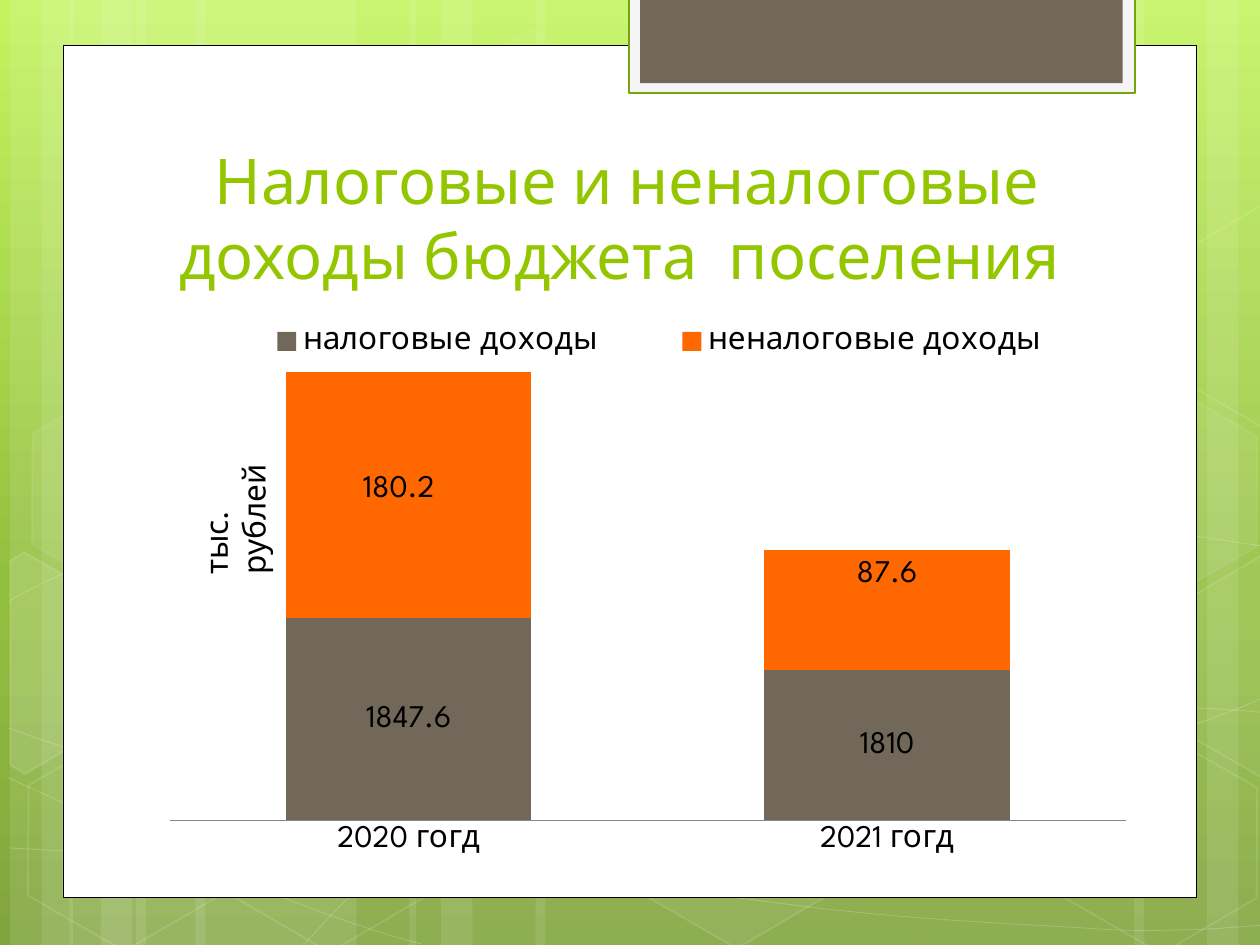
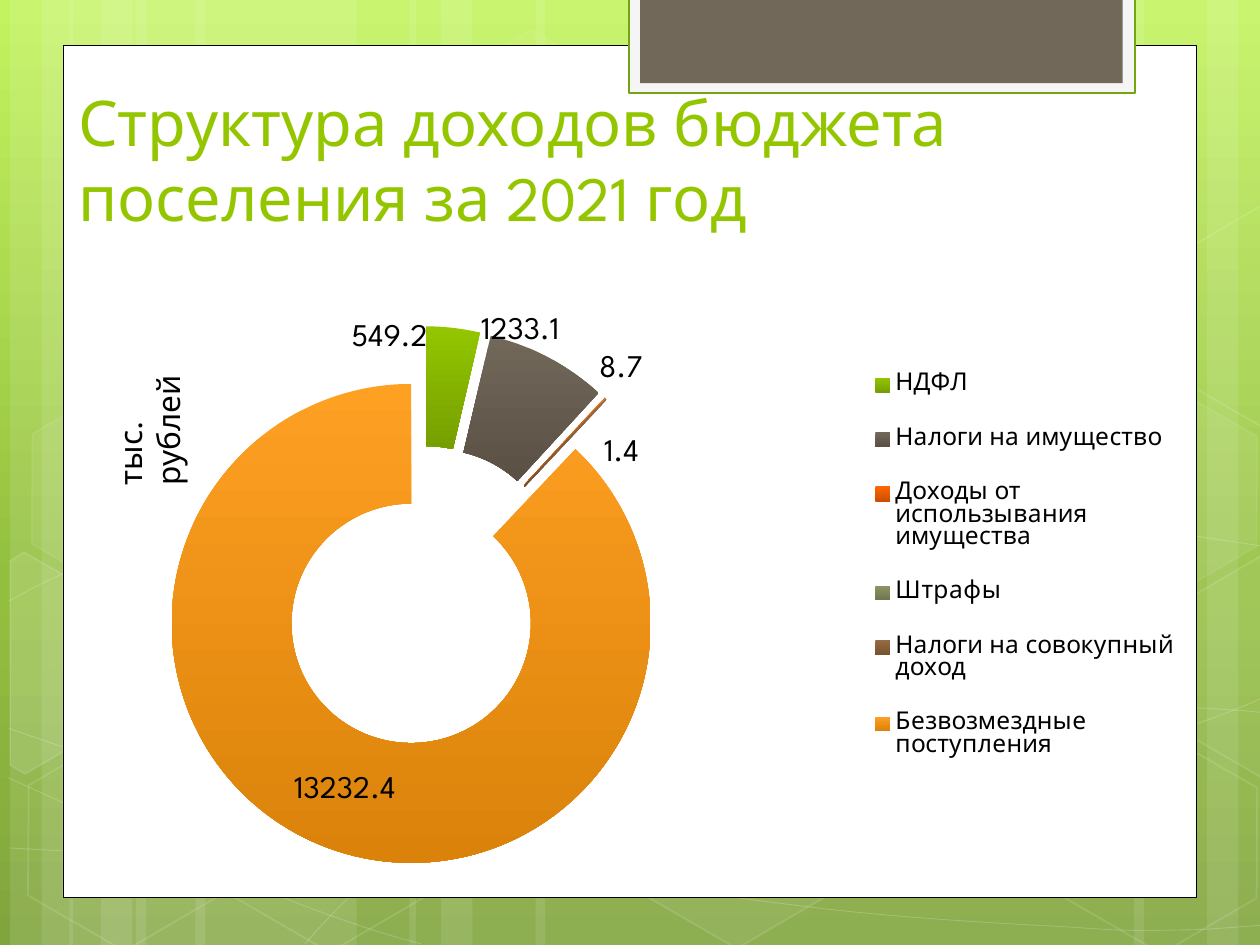
from copy import deepcopy
from math import cos, radians, sin
from typing import NamedTuple, Optional

from lxml.etree import SubElement
from pptx import Presentation
from pptx.chart.data import CategoryChartData
from pptx.dml.color import RGBColor
from pptx.enum.chart import XL_CHART_TYPE as ChartType
from pptx.enum.chart import XL_LEGEND_POSITION as LegendPosition
from pptx.enum.chart import XL_TICK_MARK as TickMark
from pptx.enum.shapes import MSO_SHAPE as Preset
from pptx.enum.text import MSO_ANCHOR as Anchor
from pptx.enum.text import MSO_AUTO_SIZE as AutoSize
from pptx.enum.text import PP_ALIGN as Align
from pptx.oxml.ns import qn
from pptx.util import Emu, Pt

EMU_PER_PX = 9144
TILT = 30
FONT = "League Spartan"
WHITE, BLACK = "FFFFFF", "000000"
LIME, TAUPE, ORANGE = "94C600", "71685A", "FF6700"
BACKDROP = [(0, "C3F35F"), (0.62, "93BF3F"), (1, "81A53E")]


class Box(NamedTuple):
    left: int
    top: int
    width: int
    height: int


class Hexagon(NamedTuple):
    left: int
    top: int
    fill_alpha: int
    line_alpha: int


class Shard(NamedTuple):
    center: tuple
    points: list
    fill_alpha: int


class Category(NamedTuple):
    name: str
    value: float
    color: str
    shade: str


class Area(NamedTuple):
    x: float
    y: float
    w: Optional[float] = None
    h: Optional[float] = None


STRIPES = [(108, 175), (8, 50), (33, 83), (155, 175), (55, 50), (80, 83),
           (733, 175), (958, 50), (900, 83), (425, 308), (325, 50), (350, 83)]
WAVES = [
    [(7, 673), (61, 676), (115, 679), (190, 678), (265, 677), (358, 675), (458, 665),
     (558, 655), (700, 636), (792, 617), (883, 598), (977, 568), (1007, 551)],
    [(7, 477), (36, 461), (65, 446), (121, 431), (178, 416), (259, 394), (347, 387),
     (436, 380), (544, 379), (654, 387), (764, 395), (947, 426), (1007, 434)],
    [(6, 617), (127, 672), (247, 727), (334, 749)],
    [(7, 578), (38, 589), (70, 600), (128, 616), (186, 631), (273, 656), (357, 673),
     (440, 690), (545, 708), (628, 718), (711, 729), (800, 733), (853, 736),
     (905, 740), (919, 738), (945, 738), (971, 737), (989, 735), (1007, 734)],
    [(242, 749), (260, 729), (278, 709), (302, 691), (326, 673), (360, 653), (388, 639),
     (416, 625), (433, 619), (470, 609), (506, 599), (573, 585), (608, 578),
     (644, 571), (649, 571), (680, 569), (711, 566), (760, 563), (794, 562),
     (829, 561), (886, 562), (886, 562), (886, 562), (953, 562), (953, 562),
     (971, 563), (988, 564), (997, 565), (1006, 566), (1003, 565), (1006, 566)],
]
HEXAGONS = [
    Hexagon(334, 36, 4, 8), Hexagon(497, 589, 6, 12), Hexagon(11, 591, 0, 12),
    Hexagon(14, 312, 7, 8), Hexagon(174, 592, 0, 12), Hexagon(753, 453, 10, 12),
    Hexagon(834, 593, 0, 12), Hexagon(834, 314, 7, 8),
]
SHARDS = [
    Shard((36, 535), [(8, 445), (19, 438), (96, 482), (95, 570), (20, 614), (8, 607)], 10),
    Shard((985, 520), [(926, 485), (1001, 441), (1009, 446), (1009, 613), (1002, 617),
                       (926, 573)], 4),
    Shard((985, 241), [(926, 207), (1001, 163), (1010, 168), (1009, 335), (1002, 339),
                       (926, 295)], 0),
]
INCOME = [
    Category("НДФЛ", 549.2, LIME, "759F00"),
    Category("Налоги на имущество", 1233.1, TAUPE, "5A5044"),
    Category("Доходы от использывания имущества", 8.7, ORANGE, "CC4F00"),
    Category("Штрафы", 1.4, "909465", "72764D"),
    Category("Налоги на совокупный доход", 17.6, "956B43", "77522F"),
    Category("Безвозмездные поступления", 13232.4, "FEA022", "DA820A"),
]


def px(length: int) -> Emu:
    return Emu(length * EMU_PER_PX)


def emu_box(box: Box) -> list:
    return [px(length) for length in box]


def rgb(color: str) -> RGBColor:
    return RGBColor.from_string(color)


def paint(shape, fill="", fill_alpha=100, line="", line_alpha=100, weight=1.0) -> None:
    shape.shadow.inherit = False
    for surface, color, alpha, route in (
            (shape.fill, fill, fill_alpha, "p:spPr/a:solidFill/a:srgbClr"),
            (shape.line.fill, line, line_alpha, "p:spPr/a:ln/a:solidFill/a:srgbClr")):
        if not color or not alpha:
            surface.background()
            continue
        surface.solid()
        surface.fore_color.rgb = rgb(color)
        if alpha < 100:
            SubElement(shape.element.xpath(route)[0], qn("a:alpha"), val=str(alpha * 1000))
    if line:
        shape.line.width = Pt(weight)


def gradient(fill, stops: list) -> None:
    fill.gradient_angle = 270
    for stop, (position, color) in zip(fill.gradient_stops, stops):
        stop.position = position
        stop.color.rgb = rgb(color)


def set_font(font, size: int, color: str = BLACK) -> None:
    font.name = FONT
    font.size = Pt(size)
    font.color.rgb = rgb(color)


def write(frame, text: str, *, size=18, color=BLACK, align=Align.LEFT, anchor=Anchor.TOP) -> None:
    frame.word_wrap = True
    frame.auto_size = AutoSize.NONE
    frame.vertical_anchor = anchor
    paragraph = frame.paragraphs[0]
    paragraph.alignment = align
    run = paragraph.add_run()
    run.text = text
    set_font(run.font, size, color)


def add_panel(shapes, box: Box, **style) -> None:
    paint(shapes.add_shape(Preset.RECTANGLE, *emu_box(box)), **style)


def add_outline(shapes, points: list, close: bool, **style):
    start, *rest = [(round(x * EMU_PER_PX), round(y * EMU_PER_PX)) for x, y in points]
    builder = shapes.build_freeform(*start)
    builder.add_line_segments(rest, close=close)
    outline = builder.convert_to_shape()
    paint(outline, **style)
    return outline


def bend(outline) -> None:
    route = outline.element.xpath(".//a:path")[0]
    segments = route.findall(qn("a:lnTo"))
    for first in range(0, len(segments), 3):
        curve = SubElement(route, qn("a:cubicBezTo"))
        for segment in segments[first:first + 3]:
            curve.append(segment[0])
            route.remove(segment)


def untilt(points: list, center: tuple) -> list:
    cosine, sine = cos(radians(TILT)), sin(radians(TILT))
    offsets = [(x - center[0], y - center[1]) for x, y in points]
    return [(center[0] + x * cosine + y * sine, center[1] - x * sine + y * cosine)
            for x, y in offsets]


def decorate(layout, slide) -> None:
    backdrop = layout.background.fill
    backdrop.gradient()
    first_stop = layout.element.xpath(".//p:bg//a:gs")[0]
    first_stop.addnext(deepcopy(first_stop))
    gradient(backdrop, BACKDROP)
    for placeholder in list(layout.placeholders):
        if placeholder.placeholder_format.idx:
            placeholder.element.getparent().remove(placeholder.element)

    shapes = slide.shapes
    for left, width in STRIPES:
        add_panel(shapes, Box(left, 0, width, 750), fill=WHITE, fill_alpha=10)
    for wave in WAVES:
        bend(add_outline(shapes, wave, False, line=WHITE, line_alpha=20, weight=0.5))
    for left, top, fill_alpha, line_alpha in HEXAGONS:
        hexagon = shapes.add_shape(Preset.HEXAGON, *emu_box(Box(left, top, 175, 152)))
        hexagon.adjustments[0] = 0.285
        hexagon.rotation = TILT
        paint(hexagon, WHITE, fill_alpha, WHITE, line_alpha)
    for center, points, fill_alpha in SHARDS:
        shard = add_outline(shapes, untilt(points, center), True, fill=WHITE,
                            fill_alpha=fill_alpha, line=WHITE, line_alpha=12)
        shard.rotation = TILT
    add_panel(shapes, Box(50, 36, 900, 676), fill=WHITE, line=BLACK, weight=0.5)
    add_panel(shapes, Box(499, -2, 402, 76), fill="F5F5F5", line="74A510", weight=1.25)
    add_panel(shapes, Box(508, -2, 383, 68), fill=TAUPE)
    for shape in list(shapes):
        if not shape.is_placeholder:
            layout.shapes.element.append(shape.element)


def set_title(slide, text: str, box: Box, align=Align.LEFT) -> None:
    title = slide.shapes.title
    title.left, title.top, title.width, title.height = emu_box(box)
    write(title.text_frame, text, size=36, color=LIME, align=align, anchor=Anchor.BOTTOM)


def add_unit(slide, left: int, top: int) -> None:
    unit = slide.shapes.add_textbox(*emu_box(Box(left, top, 146, 40)))
    unit.rotation = 270
    write(unit.text_frame, "тыс. рублей")


def place(element, area: Area, index: int, inner: bool = False) -> None:
    for stale in element.findall(qn("c:layout")):
        element.remove(stale)
    layout = SubElement(element, qn("c:layout"))
    element.insert(index, layout)
    manual = SubElement(layout, qn("c:manualLayout"))
    if inner:
        SubElement(manual, qn("c:layoutTarget"), val="inner")
    if area.w is not None:
        for mode in ("xMode", "yMode"):
            SubElement(manual, qn(f"c:{mode}"), val="edge")
    for key, value in area._asdict().items():
        if value is not None:
            SubElement(manual, qn(f"c:{key}"), val=str(value))


def add_chart(slide, kind, data, box: Box, plot_area: Area, legend_area: Area,
              legend_position, legend_size: int = 18):
    chart = slide.shapes.add_chart(kind, *emu_box(box), data).chart
    chart.has_title = False
    set_font(chart.font, 18)
    chart.has_legend = True
    chart.legend.position = legend_position
    chart.legend.include_in_layout = False
    set_font(chart.legend.font, legend_size)
    place(chart.element.xpath(".//c:plotArea")[0], plot_area, 0, inner=True)
    place(chart.element.xpath(".//c:legend")[0], legend_area, 1)
    for series in chart.plots[0].series:
        labels = series.data_labels
        labels.show_value = True
        labels.number_format = "General"
        labels.number_format_is_linked = False
        set_font(labels.font, 18)
    for labels in chart.element.xpath(".//c:dLbls"):
        leaders = labels.find(qn("c:showLeaderLines"))
        if leaders is None:
            leaders = SubElement(labels, qn("c:showLeaderLines"))
        leaders.set("val", "0")
    return chart


def point_label(chart, series: int, point: int):
    set_font(chart.plots[0].series[series].points[point].data_label.font, 18)
    return chart.element.xpath(
        f'.//c:ser[c:idx/@val="{series}"]/c:dLbls/c:dLbl[c:idx/@val="{point}"]')[0]


def build_revenue(slide) -> None:
    set_title(slide, "Налоговые и неналоговые доходы бюджета  поселения ",
              Box(114, 112, 768, 125), Align.CENTER)
    data = CategoryChartData()
    data.categories = ["2020 гогд", "2021 гогд"]
    data.add_series("налоговые доходы", [1847.6, 1810])
    data.add_series("неналоговые доходы", [180.2, 87.6])
    chart = add_chart(slide, ChartType.COLUMN_STACKED, data, Box(122, 241, 795, 461),
                      Area(0.016, 0.065, 0.955, 0.825), Area(0.05, 0.03, 0.91, 0.07),
                      LegendPosition.TOP)
    plot = chart.plots[0]
    plot.gap_width, plot.overlap = 95, 100
    plot.vary_by_categories = False
    for series, color in zip(plot.series, (TAUPE, ORANGE)):
        series.format.fill.solid()
        series.format.fill.fore_color.rgb = rgb(color)
    for point, offset in enumerate([Area(-0.01, -0.01), Area(0, -0.06)]):
        place(point_label(chart, 1, point), offset, 1)
    amounts, years = chart.value_axis, chart.category_axis
    amounts.minimum_scale, amounts.maximum_scale = 1700, 2050
    amounts.has_major_gridlines = False
    amounts.visible = False
    years.major_tick_mark = TickMark.NONE
    years.format.line.color.rgb = rgb("868686")
    add_unit(slide, 98, 373)


def build_structure(slide) -> None:
    set_title(slide, "Структура доходов бюджета поселения за 2021 год", Box(52, 131, 945, 60))
    data = CategoryChartData()
    data.categories = [income.name for income in INCOME]
    data.add_series("Series 1", [income.value for income in INCOME])
    chart = add_chart(slide, ChartType.DOUGHNUT, data, Box(59, 233, 898, 480),
                      Area(0.027, 0.054, 0.561, 0.891), Area(0.7, 0.08, 0.28, 0.74),
                      LegendPosition.RIGHT, 14)
    name = chart.element.xpath(".//c:ser/c:tx")[0]
    name.addnext(SubElement(name.getparent(), qn("c:explosion"), val="25"))
    chart.element.xpath(".//c:holeSize")[0].set("val", "50")
    for index, income in enumerate(INCOME):
        fill = chart.plots[0].series[0].points[index].format.fill
        fill.gradient()
        gradient(fill, [(0, income.color), (1, income.shade)])
    offsets = [Area(-0.05, -0.08), Area(0, -0.13), Area(0.05, -0.12), Area(0.05, 0.02)]
    for point, offset in enumerate(offsets):
        place(point_label(chart, 0, point), offset, 1)
    hidden = point_label(chart, 0, 4)
    for child in list(hidden)[1:]:
        hidden.remove(child)
    SubElement(hidden, qn("c:delete"), val="1")
    add_unit(slide, 30, 302)


def main() -> None:
    deck = Presentation()
    deck.slide_width, deck.slide_height = px(1000), px(750)
    layout = deck.slide_layouts[5]
    revenue, structure = (deck.slides.add_slide(layout) for _ in range(2))
    decorate(layout, revenue)
    build_revenue(revenue)
    build_structure(structure)
    deck.save("out.pptx")


if __name__ == "__main__":
    main()
